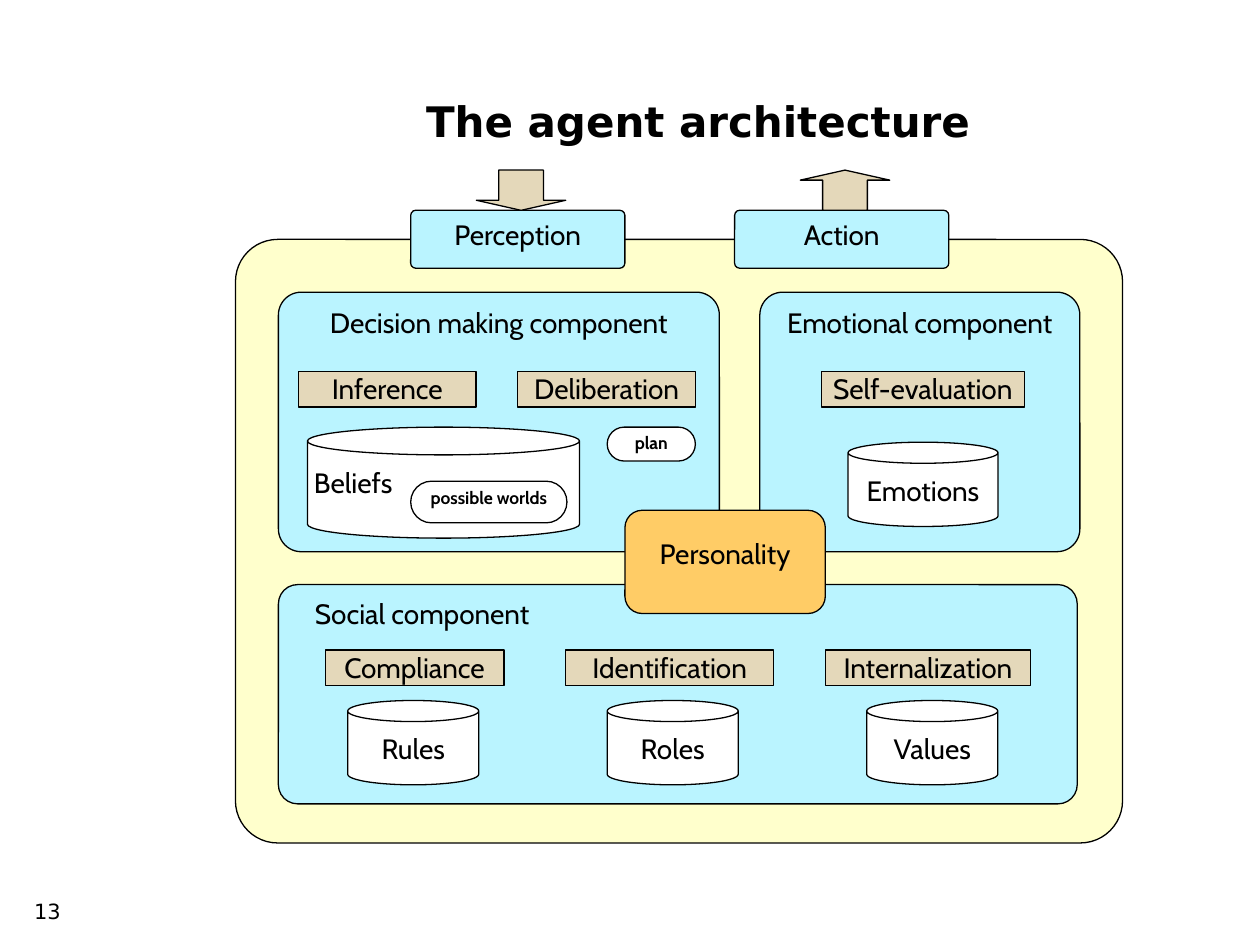
from pptx import Presentation
from pptx.dml.color import RGBColor as Color
from pptx.enum.shapes import MSO_SHAPE as Kind
from pptx.enum.text import MSO_ANCHOR as Anchor, PP_ALIGN as Align
from pptx.util import Pt

BLACK, WHITE, CREAM = "000000", "FFFFFF", "FFFFCC"
SKY, SAND, AMBER = "BAF4FF", "E4D8BA", "FFCC66"
LABEL = {"name": "Cabin", "size": Pt(16), "bold": False}
SMALL = {"name": "Cabin", "size": Pt(10), "bold": True}
HEAD = {"name": "DejaVu Sans", "size": Pt(24), "bold": True}
NUMBER = {"name": "DejaVu Sans", "size": Pt(12), "bold": False}
PAD = (7.2, 3.6, 7.2, 3.6)
NONE = (0, 0, 0, 0)


def paint(target, code):
    target.rgb = Color.from_string(code)


def apply(target, values):
    for name, value in values.items():
        setattr(target, name, value)


def place(shape, box):
    apply(shape, dict(zip(("left", "top", "width", "height"), map(Pt, box))))


def write(shape, text, style, pad=PAD, align=Align.CENTER, anchor=Anchor.TOP):
    frame = shape.text_frame
    sides = ("margin_left", "margin_top", "margin_right", "margin_bottom")
    apply(frame, dict(zip(sides, map(Pt, pad))))
    apply(frame, {"word_wrap": True, "vertical_anchor": anchor})
    frame.text = text
    line = frame.paragraphs[0]
    line.alignment = align
    apply(line.font, style)
    paint(line.font.color, BLACK)


def draw(slide, kind, box, fill, *adjust):
    shape = slide.shapes.add_shape(kind, *map(Pt, box))
    shape.shadow.inherit = False
    shape.fill.solid()
    paint(shape.fill.fore_color, fill)
    paint(shape.line.color, BLACK)
    shape.line.width = Pt(0.75)
    for spot, value in enumerate(adjust):
        shape.adjustments[spot] = value
    return shape


def panel(slide, text, box, pad=PAD, align=Align.CENTER):
    shape = draw(slide, Kind.ROUNDED_RECTANGLE, box, SKY, 0.088)
    write(shape, text, LABEL, pad, align)


def store(slide, text, box, left=0, align=Align.CENTER):
    shape = draw(slide, Kind.CAN, box, WHITE, 0.25)
    write(shape, text, LABEL, (left, 5.8, 0, 0), align)


def process(slide, text, left, top, width):
    shape = draw(slide, Kind.RECTANGLE, (left, top, width, 20.2), SAND)
    write(shape, text, LABEL, NONE)


def pill(slide, text, box):
    shape = draw(slide, Kind.ROUNDED_RECTANGLE, box, WHITE, 0.5)
    write(shape, text, SMALL, NONE)


def port(slide, text, left, kind):
    panel(slide, text, (left, 120.2, 122.4, 33.1))
    draw(slide, kind, (left + 37.5, 97.2, 51.1, 23), SAND, 0.5, 0.25)


def main():
    deck = Presentation()
    apply(deck, {"slide_width": Pt(720), "slide_height": Pt(540)})
    slide = deck.slides.add_slide(deck.slide_layouts[5])

    title = slide.shapes.title
    place(title, (108, 23.8, 581.8, 90))
    write(title, "The agent architecture", HEAD, anchor=Anchor.MIDDLE)
    page = slide.shapes.add_textbox(*map(Pt, (0, 509.8, 41.8, 30.2)))
    write(page, "13", NUMBER, align=Align.RIGHT)

    draw(slide, Kind.ROUNDED_RECTANGLE, (134.6, 136.8, 506.9, 344.9), CREAM, 0.07)
    panel(slide, "Decision making component", (159.1, 167, 252, 148.3))
    panel(slide, "Social component", (159.1, 334.1, 456.5, 125.3),
          (17.7, 3.6, 7.2, 3.6), Align.LEFT)
    panel(slide, "Emotional component", (434.2, 167, 182.9, 148.3))

    store(slide, "Beliefs", (175.7, 244.1, 155.5, 63.4), 3.7, Align.LEFT)
    store(slide, "Emotions", (484.6, 252.7, 85.7, 48.2))
    for step, text in enumerate(("Rules", "Roles", "Values")):
        store(slide, text, (198.7 + 148.3 * step, 400.3, 74.9, 48.2))

    rows = {
        212.4: (("Inference", 170.6, 101.5), ("Deliberation", 295.9, 101.5),
                ("Self-evaluation", 469.4, 115.9)),
        371.5: (("Compliance", 185.8, 102.2), ("Identification", 323.3, 118.8),
                ("Internalization", 471.6, 117.4)),
    }
    for top, row in rows.items():
        for text, left, width in row:
            process(slide, text, left, top, width)

    port(slide, "Perception", 234.7, Kind.DOWN_ARROW)
    port(slide, "Action", 419.8, Kind.UP_ARROW)

    pill(slide, "plan", (347, 244.1, 50.4, 19.4))
    pill(slide, "possible worlds", (234.7, 275, 89.3, 23.8))
    core = draw(slide, Kind.ROUNDED_RECTANGLE, (357.1, 291.6, 114.5, 59), AMBER, 0.167)
    write(core, "Personality", LABEL, (0, 12, 0, 0))

    deck.save("out.pptx")


if __name__ == "__main__":
    main()
